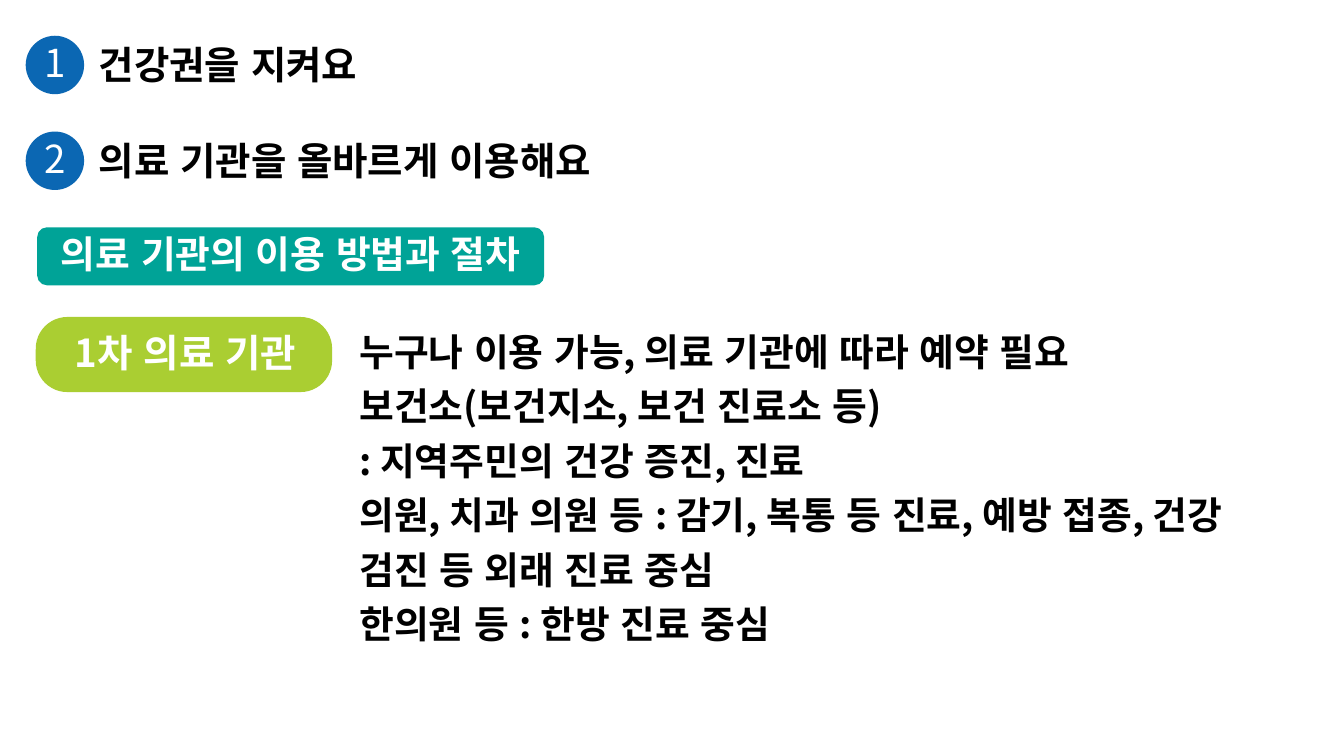
from collections import namedtuple
from dataclasses import dataclass
from lxml.etree import SubElement as Sub
from pptx import Presentation as Deck
from pptx.dml.color import RGBColor as Rgb
from pptx.enum.lang import MSO_LANGUAGE_ID as Lang
from pptx.enum.shapes import MSO_SHAPE as Kind
from pptx.enum.text import MSO_ANCHOR as Anchor, MSO_AUTO_SIZE as Fit, PP_ALIGN as Align
from pptx.oxml.ns import qn
from pptx.util import Inches, Pt

Box = namedtuple("Box", "x y w h")


@dataclass(frozen=True)
class Theme:
    """Colours, type sizes and font of the slide."""
    ink: str = "000000"
    paper: str = "FFFFFF"
    blue: str = "0B67B3"
    teal: str = "00A397"
    lime: str = "AACE32"
    head: int = 55
    body: int = 54
    font: str = "Noto Sans CJK KR"
    pad: float = 0.06


THEME = Theme()
WIDE, HIGH = Inches(26.67), Inches(15)
ITEMS = ["건강권을 지켜요", "의료 기관을 올바르게 이용해요"]
BAND = "의료 기관의 이용 방법과 절차"
PILL = "1차 의료 기관"
LINES = [
    "누구나 이용 가능, 의료 기관에 따라 예약 필요",
    "보건소(보건지소, 보건 진료소 등)",
    ": 지역주민의 건강 증진, 진료",
    "의원, 치과 의원 등 : 감기, 복통 등 진료, 예방 접종, 건강 검진 등 외래 진료 중심",
    "한의원 등 : 한방 진료 중심",
]


def grid(x, y, w, h):
    """Turn hundredths of the slide into a box."""
    return Box(*(int(part * side / 100) for part, side in zip((x, y, w, h), (WIDE, HIGH) * 2)))


def part(box, x, y, w, h):
    """Return the given shares of a box."""
    return Box(int(box.x + x * box.w), int(box.y + y * box.h), int(w * box.w), int(h * box.h))


def fill(slide, kind, box, tone):
    """Add a plain filled shape."""
    shape = slide.shapes.add_shape(kind, *box)
    shape.shadow.inherit = False
    shape.fill.solid()
    shape.fill.fore_color.rgb = Rgb.from_string(tone)
    shape.line.fill.background()
    return shape


def write(shape, lines, size, tone, bold=True, align=Align.LEFT, anchor=Anchor.TOP, space=1.0, pad=THEME.pad):
    """Set one paragraph for each line of text."""
    frame = shape.text_frame
    frame.word_wrap, frame.auto_size = True, Fit.NONE
    frame.vertical_anchor = anchor
    frame.margin_left = frame.margin_right = Inches(pad)
    frame.margin_top = frame.margin_bottom = Inches(pad)
    for i, line in enumerate(lines):
        para = frame.add_paragraph() if i else frame.paragraphs[0]
        para.alignment, para.line_spacing = align, space
        run = para.add_run()
        run.text = line
        font = run.font
        font.size, font.bold, font.name = Pt(size), bold, THEME.font
        font.language_id = Lang.KOREAN
        font.color.rgb = Rgb.from_string(tone)
        Sub(font._element, qn("a:ea"), typeface=THEME.font)


def item(slide, box, mark, text):
    """Draw a numbered heading."""
    disc = box._replace(w=box.h)
    fill(slide, Kind.OVAL, disc, THEME.blue)
    digit = slide.shapes.add_textbox(*part(disc, 0.17, 0.09, 0.66, 0.82))
    write(digit, [mark], THEME.head, THEME.paper, False, Align.CENTER, Anchor.MIDDLE, 0.9)
    left = int(1.2 * box.h)
    label = slide.shapes.add_textbox(box.x + left, int(box.y + 0.04 * box.h), box.w - left, int(0.65 * box.h))
    write(label, [text], THEME.head, THEME.ink)


def band(slide, box):
    """Draw the title on its band."""
    fill(slide, Kind.ROUNDED_RECTANGLE, box, THEME.teal)
    title = slide.shapes.title
    title.left, title.top, title.width, title.height = part(box, 0.03, 0.09, 0.94, 0.83)
    write(title, [BAND], THEME.body, THEME.paper, True, Align.CENTER, Anchor.MIDDLE, 0.9)
    slide.shapes._spTree.append(title._element)


def pill(slide, box):
    """Draw the label of the care level."""
    shape = fill(slide, Kind.ROUNDED_RECTANGLE, box, THEME.lime)
    shape.adjustments[0] = 0.42
    label = slide.shapes.add_textbox(*part(box, 0.07, 0.12, 0.87, 0.76))
    write(label, [PILL], THEME.head, THEME.paper, align=Align.CENTER)


def notes(slide, box):
    """Write the details of the care level."""
    label = slide.shapes.add_textbox(*box)
    write(label, LINES, THEME.body, THEME.ink, space=1.2, pad=0.1)
    frame = label.text_frame
    frame.margin_top = frame.margin_bottom = Inches(0.05)


def main():
    """Build and save the slide."""
    deck = Deck()
    deck.slide_width, deck.slide_height = WIDE, HIGH
    slide = deck.slides.add_slide(deck.slide_layouts[5])
    for i, text in enumerate(ITEMS):
        item(slide, grid(1.91, 4.73 + 12.67 * i, 61.7, 7.73), str(i + 1), text)
    band(slide, grid(2.77, 30.07, 37.72, 7.67))
    pill(slide, grid(2.66, 41.93, 22.05, 9.93))
    notes(slide, grid(26.36, 41.93, 69.5, 44.27))
    deck.save("out.pptx")


if __name__ == "__main__":
    main()
